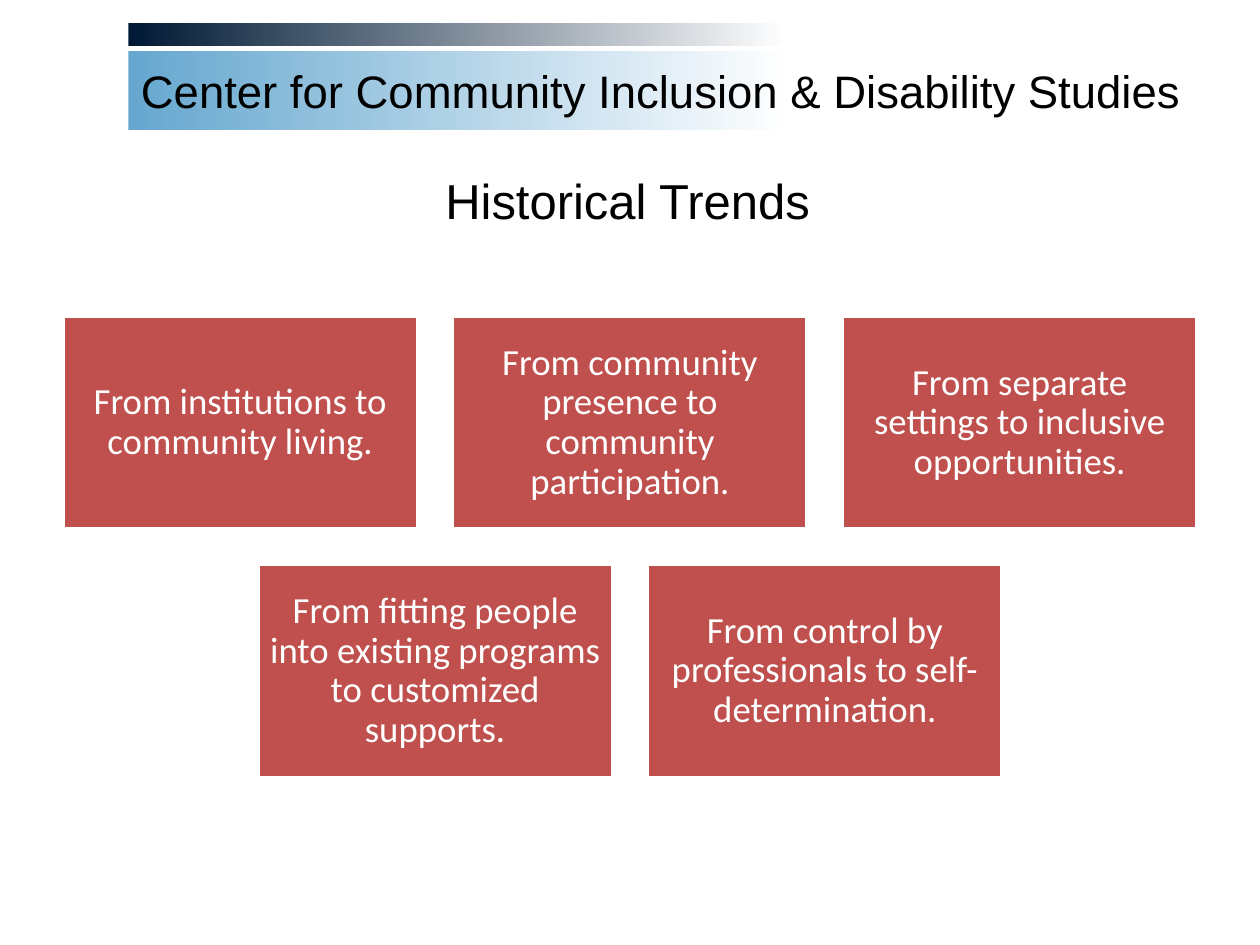
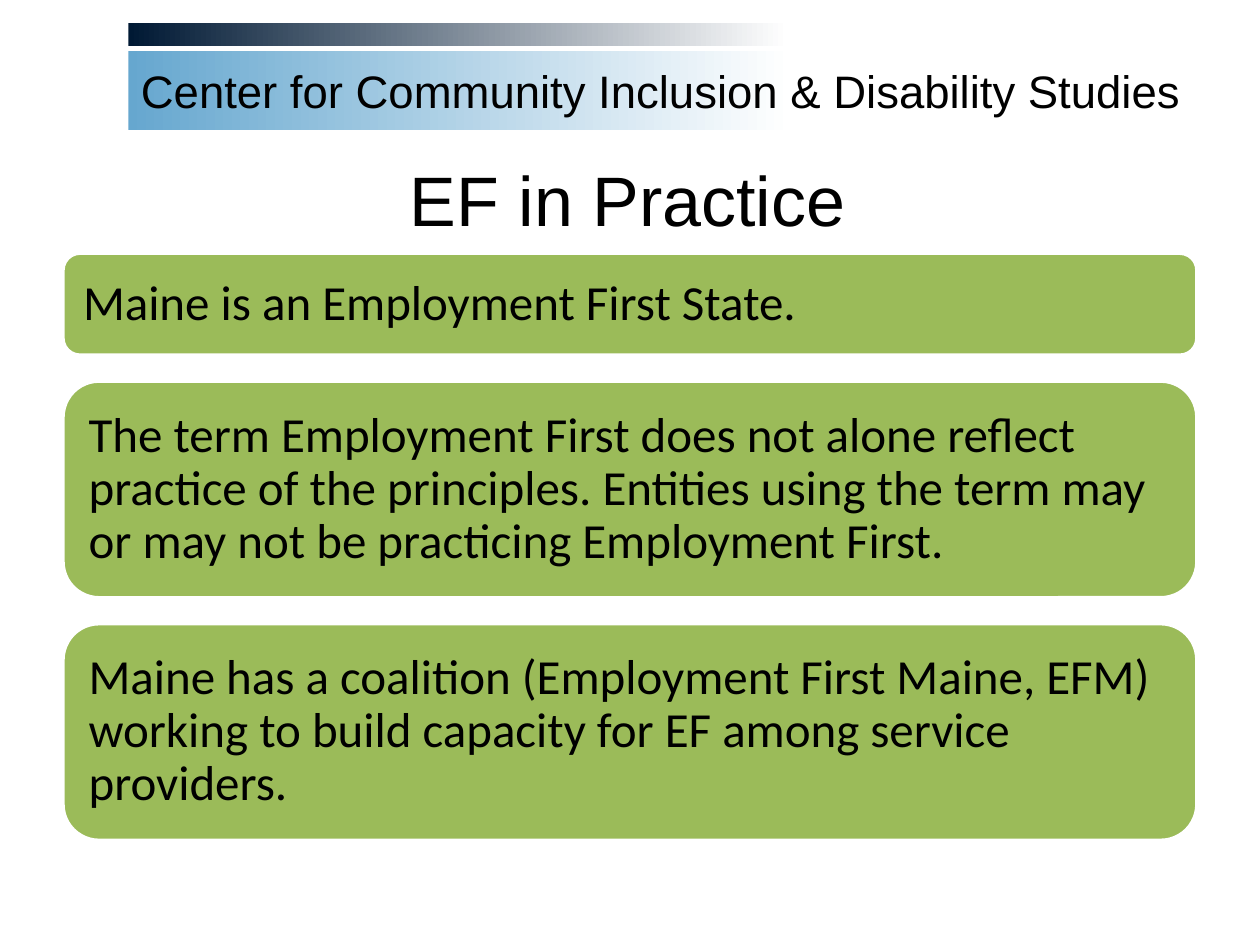
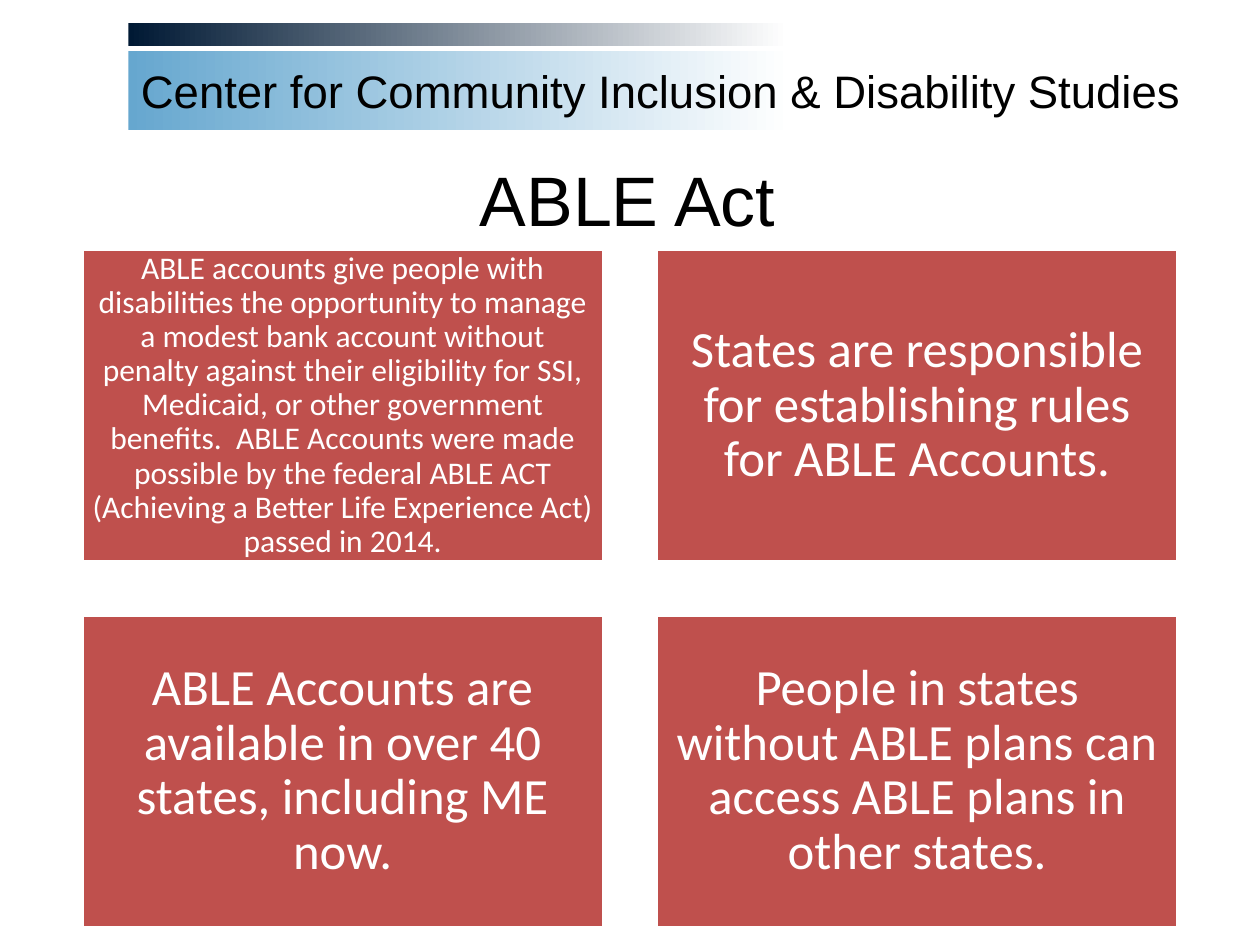
from collections import namedtuple
from math import ceil

from pptx import Presentation
from pptx import util as u
from pptx.dml.color import RGBColor
from pptx.enum import shapes, text

SLIDE_W, SLIDE_H = u.Inches(10), u.Inches(7.5)
COLORS = {
    "navy": "001934", "sky": "66A7CF", "white": "FFFFFF",
    "black": "000000", "brick": "BF504D", "green": "9BBB59",
}
CENTER = "Center for Community Inclusion & Disability Studies"
HEADING = {"name": "Arial", "color": "black"}
CARD = {"name": "Calibri", "color": "white"}
STATEMENT = {"name": "Calibri", "color": "black", "size": 28}
RECT = shapes.MSO_SHAPE.RECTANGLE
ROUNDED = shapes.MSO_SHAPE.ROUNDED_RECTANGLE
Box = namedtuple("Box", "left top width height")

TRENDS = [
    "From institutions to community living.",
    "From community presence to community participation.",
    "From separate settings to inclusive opportunities.",
    "From fitting people into existing programs to customized supports.",
    "From control by professionals to self-determination.",
]
# Each statement with its share of the stack's height
PRACTICES = [
    ("Maine is an Employment First State.", 8),
    ("The term Employment First does not alone reflect practice of the principles. "
     "Entities using the term may or may not be practicing Employment First.", 17),
    ("Maine has a coalition (Employment First Maine, EFM) working to build capacity "
     "for EF among service providers.", 17),
]
ABLE_ORIGIN = (
    "ABLE accounts give people with disabilities the opportunity to manage a modest "
    "bank account without penalty against their eligibility for SSI, Medicaid, or "
    "other government benefits.  ABLE Accounts were made possible by the federal "
    "ABLE ACT (Achieving a Better Life Experience Act) passed in 2014."
)
ABLE_FACTS = [
    "States are responsible for establishing rules for ABLE Accounts.",
    "ABLE Accounts are available in over 40 states, including ME now.",
    "People in states without ABLE plans can access ABLE plans in other states.",
]


def rgb(name):
    return RGBColor.from_string(COLORS[name])


def across(percent):
    return int(SLIDE_W * percent / 100)


def down(percent):
    return int(SLIDE_H * percent / 100)


def region(left, top, width, height):
    """Box given in percent of the slide's width and height."""
    return Box(across(left), down(top), across(width), down(height))


def write(shape, wording, font, align, inset=(0.1, 0.05), spacing=0.9):
    frame = shape.text_frame
    side, end = (u.Inches(length) for length in inset)
    frame_format = {
        "word_wrap": True, "vertical_anchor": text.MSO_ANCHOR.MIDDLE,
        "margin_left": side, "margin_right": side,
        "margin_top": end, "margin_bottom": end,
    }
    for key, value in frame_format.items():
        setattr(frame, key, value)
    paragraph = frame.paragraphs[0]
    paragraph.alignment = align
    paragraph.line_spacing = spacing
    run = paragraph.add_run()
    run.text = wording
    for key, value in {"name": font["name"], "size": u.Pt(font["size"])}.items():
        setattr(run.font, key, value)
    run.font.color.rgb = rgb(font["color"])


def panel(slide, box, color, outline=u.Pt(2), kind=RECT):
    shape = slide.shapes.add_shape(kind, *box)
    shape.shadow.inherit = False
    shape.fill.solid()
    shape.fill.fore_color.rgb = rgb(color)
    shape.line.color.rgb = rgb("white")
    shape.line.width = outline
    return shape


def fading_band(slide, box, color):
    band = panel(slide, box, color)
    band.line.fill.background()
    band.fill.gradient()
    band.fill.gradient_angle = 0
    fade = [(0, color), (0.6, "white")]
    for stop, (position, shade) in zip(band.fill.gradient_stops, fade):
        stop.position = position
        stop.color.rgb = rgb(shade)
    return band


def add_page(deck, title, size):
    """Slide with the center's bands and a title."""
    slide = deck.slides.add_slide(deck.slide_layouts[6])
    center = fading_band(slide, region(10.2, 5.4, 87.7, 8.4), "sky")
    write(center, CENTER, {**HEADING, "size": 26}, text.PP_ALIGN.LEFT, spacing=1.0)
    fading_band(slide, region(10.2, 2.4, 87.3, 2.53), "navy")
    heading = slide.shapes.add_textbox(*region(4.7, 18, 90.2, 7.07))
    write(heading, title, {**HEADING, "size": size}, text.PP_ALIGN.CENTER)
    return slide


def card_grid(slide, box, cards, columns, gap):
    """Equal cards, row by row, with a short last row centred.

    Each card is its wording, text size and inset in inches.
    """
    rows = ceil(len(cards) / columns)
    width = (box.width - gap * (columns - 1)) // columns
    height = (box.height - gap * (rows - 1)) // rows
    for row in range(rows):
        row_cards = cards[row * columns:(row + 1) * columns]
        indent = (columns - len(row_cards)) * (width + gap) // 2
        for column, (wording, size, inset) in enumerate(row_cards):
            cell = Box(box.left + indent + column * (width + gap),
                       box.top + row * (height + gap), width, height)
            write(panel(slide, cell, "brick"), wording, {**CARD, "size": size},
                  text.PP_ALIGN.CENTER, (inset, inset))


def statement_stack(slide, box, statements, gap):
    """Rounded bars that share the height by weight."""
    free = box.height - gap * (len(statements) - 1)
    total = sum(weight for _, weight in statements)
    top = box.top
    for wording, weight in statements:
        height = free * weight // total
        bar = panel(slide, Box(box.left, top, box.width, height), "green", kind=ROUNDED)
        write(bar, wording, STATEMENT, text.PP_ALIGN.LEFT, (0.12, 0.12))
        top += height + gap


def main():
    deck = Presentation()
    deck.slide_width, deck.slide_height = SLIDE_W, SLIDE_H

    # Historical trends: three cards above two
    trends = add_page(deck, "Historical Trends", 28)
    card_grid(trends, region(5, 33.47, 90, 48.8),
              [(trend, 21, 0.09) for trend in TRENDS], 3, across(2.8))

    # Employment First in practice
    practice = add_page(deck, "EF in Practice", 40)
    statement_stack(practice, region(5, 26.8, 90, 62.13), PRACTICES, across(2.05))

    # ABLE Act: two by two
    able = add_page(deck, "ABLE Act", 40)
    able_cards = [(ABLE_ORIGIN, 18, 0.07)] + [(fact, 29, 0.12) for fact in ABLE_FACTS]
    card_grid(able, region(6.5, 26.4, 87, 71.73), able_cards, 2, across(4.2))

    deck.save("out.pptx")


if __name__ == "__main__":
    main()
